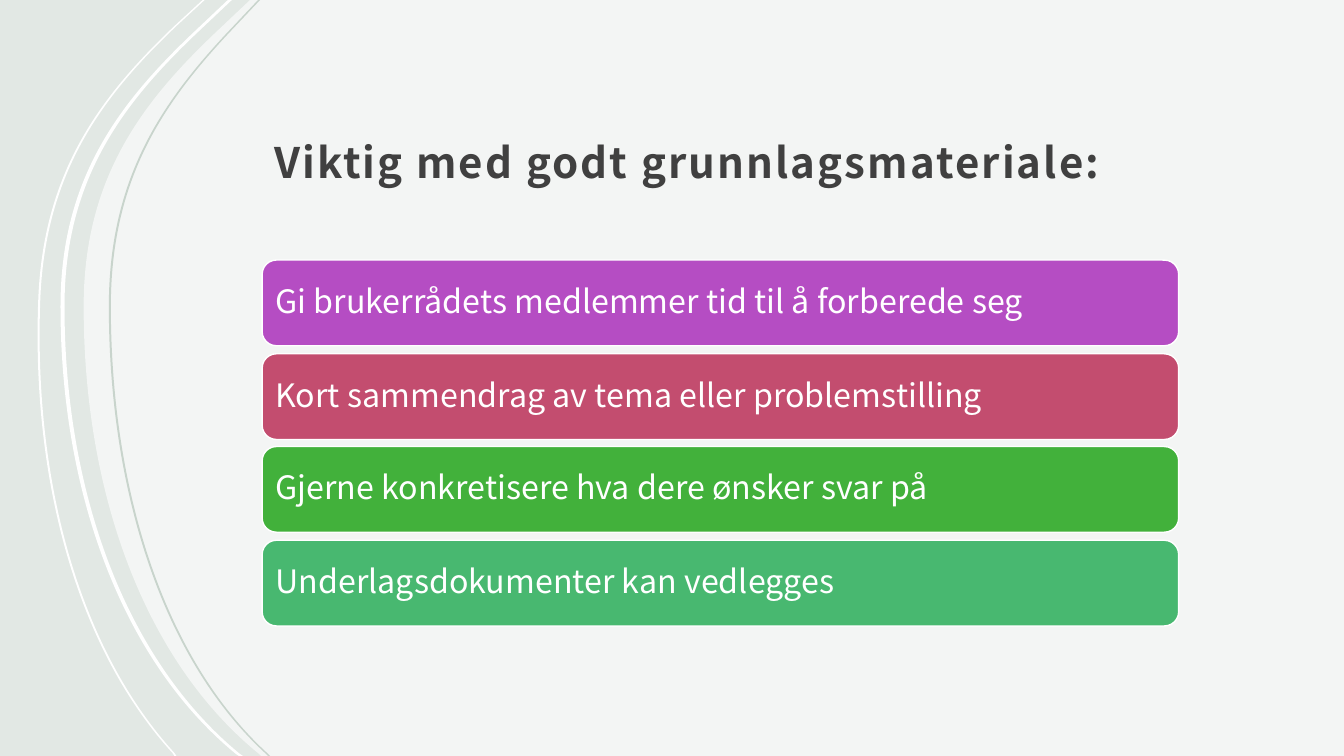
"""Build the slide on good background material: curved ribbons, a title and four cards."""
from lxml import etree
from pptx import Presentation
from pptx import util as u
from pptx.dml.color import RGBColor
from pptx.enum import shapes, text
from pptx.oxml.ns import qn

PX = 9144
W, H = 1333, 750
FONT = "Noto Sans CJK JP"
COLORS = {"bg": "E2E8E4", "white": "FFFFFF", "grey": "C8D4CC", "title": "404040",
          "purple": "B54DC3", "rose": "C34D6F", "green": "42B13B", "mint": "48B870"}


def fill_shape(sp, color):
    """Give a shape a solid fill and no shadow."""
    sp.shadow.inherit = False
    sp.fill.solid()
    sp.fill.fore_color.rgb = RGBColor.from_string(COLORS[color])


def format_text(tf, words, box, para, font, color):
    """Write one formatted paragraph into a text frame."""
    p = tf.paragraphs[0]
    r = p.add_run()
    r.text = words
    for target, values in ((tf, box), (p, para), (r.font, font)):
        for name, value in values.items():
            setattr(target, name, value)
    r.font.color.rgb = RGBColor.from_string(COLORS[color])
    return r


prs = Presentation()
prs.slide_width, prs.slide_height = W * PX, H * PX
s = prs.slides.add_slide(prs.slide_layouts[5])
s.background.fill.solid()
s.background.fill.fore_color.rgb = RGBColor.from_string(COLORS["bg"])

panel = [(248, 0), (211, 35), (139, 104), (83, 179), (83, 304),
         (83, 492), (145, 657), (257, 748), (259, 750)]
outer = [(201, 0), (175, 24), (102, 93), (43, 168), (38, 297),
         (31, 480), (78, 645), (171, 747), (173, 750)]
middle = [(226, 0), (189, 35), (117, 104), (60, 179), (60, 304),
          (60, 492), (123, 657), (234, 748), (237, 750)]
inner = [(256, 0), (223, 35), (159, 104), (108, 179), (108, 304),
         (108, 492), (164, 657), (264, 748), (266, 750)]

outlines = [(panel + [(W, H), (W, 0)], "white", 60, (2, 5))]
for edge, width, color in ((outer, 2, "white"), (middle, 4, "white"), (inner, 2, "grey")):
    back = [(x + width, y) for x, y in reversed(edge)]
    outlines.append((edge + back, color, 100, (2, 5, 11, 14)))

for outline, color, opacity, curve_starts in outlines:
    fb = s.shapes.build_freeform(*outline[0], scale=PX)
    fb.add_line_segments(outline[1:], close=True)
    sp = fb.convert_to_shape()
    fill_shape(sp, color)
    sp.line.fill.background()
    steps = list(next(sp._element.iter(qn("a:path"))))
    for start in curve_starts:
        curve = etree.Element(qn("a:cubicBezTo"))
        steps[start].addprevious(curve)
        for step in steps[start:start + 3]:
            curve.append(step[0])
            step.getparent().remove(step)
    if opacity < 100:
        clr = sp._element.spPr.find(qn("a:solidFill"))[0]
        etree.SubElement(clr, qn("a:alpha"), val=str(opacity * 1000))

title = s.shapes.title
s.shapes._spTree.append(title._element)
for name, value in {"left": 260, "top": 48, "width": 918, "height": 147}.items():
    setattr(title, name, value * PX)
r = format_text(
    title.text_frame, "Viktig med godt grunnlagsmateriale:",
    {"word_wrap": True, "auto_size": text.MSO_AUTO_SIZE.NONE,
     "vertical_anchor": text.MSO_ANCHOR.BOTTOM, "margin_left": 12 * PX,
     "margin_right": 12 * PX, "margin_top": 12 * PX, "margin_bottom": 10 * PX},
    {"alignment": text.PP_ALIGN.LEFT, "line_spacing": 1.3},
    {"name": FONT, "size": u.Pt(30), "bold": True}, "title")
r._r.get_or_add_rPr().set("spc", "150")

cards = [("Gi brukerrådets medlemmer tid til å forberede seg", "purple"),
         ("Kort sammendrag av tema eller problemstilling", "rose"),
         ("Gjerne konkretisere hva dere ønsker svar på", "green"),
         ("Underlagsdokumenter kan vedlegges", "mint")]
FIRST_TOP, LAST_TOP = 258, 536
for i, (words, color) in enumerate(cards):
    top = FIRST_TOP + round(i * (LAST_TOP - FIRST_TOP) / (len(cards) - 1))
    sp = s.shapes.add_shape(shapes.MSO_SHAPE.ROUNDED_RECTANGLE,
                            260 * PX, top * PX, 909 * PX, 85 * PX)
    fill_shape(sp, color)
    sp.line.color.rgb = RGBColor.from_string(COLORS["white"])
    sp.line.width = u.Pt(1)
    format_text(
        sp.text_frame, words,
        {"word_wrap": True, "vertical_anchor": text.MSO_ANCHOR.MIDDLE,
         "margin_left": 9 * PX, "margin_right": 9 * PX,
         "margin_top": 9 * PX, "margin_bottom": 9 * PX},
        {"alignment": text.PP_ALIGN.LEFT, "line_spacing": 0.9},
        {"name": FONT, "size": u.Pt(23)}, "white")

prs.save("out.pptx")
